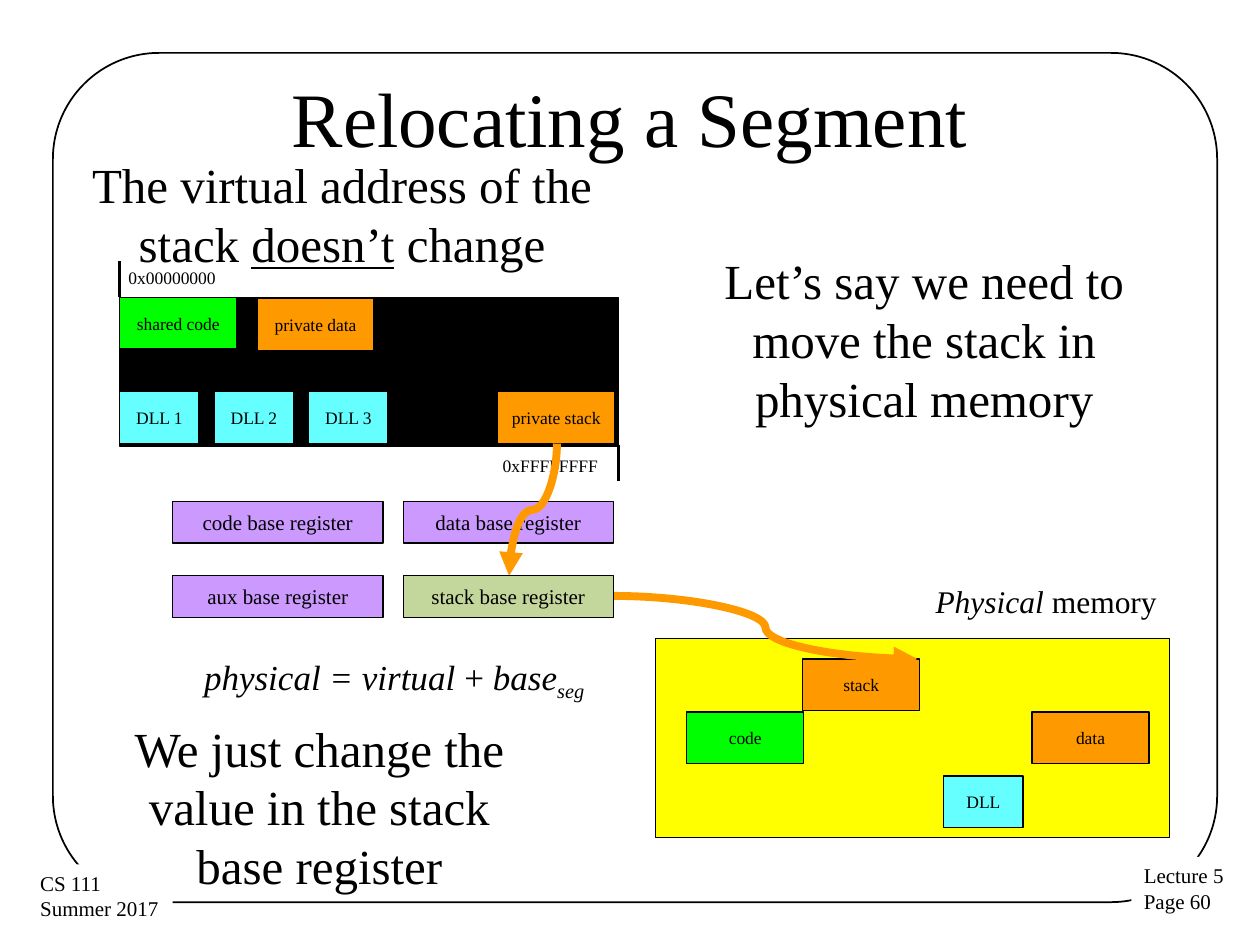
from dataclasses import dataclass

from pptx import Presentation
from pptx.dml.color import RGBColor
from pptx.enum.shapes import MSO_CONNECTOR as Link, MSO_SHAPE as Shape
from pptx.enum.text import MSO_ANCHOR as Anchor, MSO_AUTO_SIZE as AutoSize, PP_ALIGN as Align
from pptx.oxml.ns import qn
from pptx.oxml.xmlchemy import OxmlElement
from pptx.util import Inches, Pt


@dataclass(frozen=True)
class Theme:
    font: str = "Times New Roman"
    black: str = "000000"
    white: str = "FFFFFF"
    green: str = "00FF00"
    orange: str = "FF9900"
    cyan: str = "66FFFF"
    yellow: str = "FFFF00"
    purple: str = "CC99FF"
    sage: str = "C3D69B"
    title: int = 44
    comment: int = 28
    formula: int = 20
    heading: int = 18
    label: int = 12
    small: int = 10
    outline: float = 0.75
    arrow: float = 4.5


class SlideBuilder:
    """Draws themed elements on the current slide."""

    def __init__(self, slide, theme):
        self.slide = slide
        self.theme = theme

    def add_runs(self, shape, paragraphs, size, align, wrap=False, margins=(0.1, 0.05)):
        frame = shape.text_frame
        frame.word_wrap = wrap
        frame.margin_left = frame.margin_right = Inches(margins[0])
        frame.margin_top = frame.margin_bottom = Inches(margins[1])
        for index, runs in enumerate(paragraphs):
            paragraph = frame.paragraphs[0] if index == 0 else frame.add_paragraph()
            paragraph.alignment = align
            for text, style in runs:
                run = paragraph.add_run()
                run.text = text
                font = run.font
                font.name = self.theme.font
                font.size = Pt(style.get("size", size))
                font.color.rgb = RGBColor.from_string(self.theme.black)
                font.italic = style.get("italic", False)
                font.underline = style.get("underline", False)
                if style.get("subscript"):
                    font._element.set("baseline", "-25000")

    def text(self, box, paragraphs, size, align=Align.CENTER, wrap=False,
             margins=(0.1, 0.05), anchor=Anchor.TOP, grow=True, fill=None):
        shape = self.slide.shapes.add_textbox(*map(Inches, box))
        self.add_runs(shape, paragraphs, size, align, wrap, margins)
        shape.text_frame.vertical_anchor = anchor
        shape.text_frame.auto_size = AutoSize.SHAPE_TO_FIT_TEXT if grow else AutoSize.NONE
        if fill:
            shape.fill.solid()
            shape.fill.fore_color.rgb = RGBColor.from_string(fill)

    def box(self, box, fill=None, label=None, size=None, margins=(0.1, 0.05),
            kind=Shape.RECTANGLE, width=None):
        shape = self.slide.shapes.add_shape(kind, *map(Inches, box))
        shape.shadow.inherit = False
        if fill:
            shape.fill.solid()
            shape.fill.fore_color.rgb = RGBColor.from_string(fill)
        else:
            shape.fill.background()
        shape.line.color.rgb = RGBColor.from_string(self.theme.black)
        shape.line.width = Pt(width or self.theme.outline)
        if label:
            self.add_runs(shape, [[(label, {})]], size, Align.CENTER, margins=margins)
            shape.text_frame.vertical_anchor = Anchor.MIDDLE
        return shape

    def segment(self, left, top, label, fill, width=0.93):
        self.box((left, top, width, 0.41), fill, label, self.theme.small, (0.09, 0.04))

    def register(self, left, top, label, fill):
        self.box((left, top, 1.67, 0.33), fill, label, self.theme.label)

    def connector(self, kind, start, end, color, width):
        line = self.slide.shapes.add_connector(kind, *map(Inches, start + end))
        line.line.color.rgb = RGBColor.from_string(color)
        line.line.width = Pt(width)
        line.element.spPr.append(OxmlElement("a:effectLst"))
        return line

    def tick(self, x, top):
        self.connector(Link.STRAIGHT, (x, top), (x, top + 0.29), self.theme.black, 0)

    def arrow(self, start, end, vertical=False):
        theme = self.theme
        if vertical:
            middle_x, middle_y = (start[0] + end[0]) / 2, (start[1] + end[1]) / 2
            half_x, half_y = (end[1] - start[1]) / 2, (start[0] - end[0]) / 2
            start = (middle_x - half_x, middle_y - half_y)
            end = (middle_x + half_x, middle_y + half_y)
        line = self.connector(Link.CURVE, start, end, theme.orange, theme.arrow)
        properties = line.element.spPr
        if vertical:
            properties.find(qn("a:xfrm")).set("rot", str(90 * 60000))
        head = OxmlElement("a:tailEnd")
        head.set("type", "triangle")
        properties.find(qn("a:ln")).append(head)


def main():
    theme = Theme()
    presentation = Presentation()
    presentation.slide_width, presentation.slide_height = Inches(10), Inches(7.5)
    slide = presentation.slides.add_slide(presentation.slide_layouts[6])
    builder = SlideBuilder(slide, theme)

    frame = builder.box((0.42, 0.42, 9.24, 6.74), kind=Shape.ROUNDED_RECTANGLE, width=1)
    frame.adjustments[0] = 0.125
    for box, lines in (
        ((8.98, 6.8, 0.84, 0.51), ("Lecture 5", "Page 60")),
        ((0.22, 6.86, 1.15, 0.51), ("CS 111", "Summer 2017")),
    ):
        builder.text(box, [[(line, {})] for line in lines], theme.label, Align.LEFT,
                     fill=theme.white)
    builder.text((0.5, 0.3, 9, 1.25), [[("Relocating a Segment", {})]], theme.title,
                 wrap=True, anchor=Anchor.MIDDLE, grow=False)

    builder.box((0.95, 2.36, 3.96, 1.18), theme.black)
    builder.tick(0.95, 2.07)
    builder.tick(4.91, 3.53)
    for box, address in (
        ((1.02, 2.12, 0.7, 0.17), "0x00000000"),
        ((3.99, 3.61, 0.77, 0.17), "0xFFFFFFFF"),
    ):
        builder.text(box, [[(address, {})]], theme.small, Align.LEFT, margins=(0, 0))
    builder.segment(0.95, 2.36, "shared code", theme.green)
    builder.segment(2.04, 2.37, "private data", theme.orange)
    builder.segment(3.95, 3.11, "private stack", theme.orange)
    for index in range(3):
        builder.segment(0.95 + 0.75 * index, 3.11, f"DLL {index + 1}", theme.cyan, 0.63)

    builder.box((5.2, 5.07, 4.08, 1.58), theme.yellow)
    builder.text((7.28, 4.57, 2, 0.4), [[("Physical", {"italic": True}), (" memory ", {})]],
                 theme.heading, Align.RIGHT)
    builder.segment(5.45, 5.65, "code", theme.green)
    builder.segment(8.19, 5.65, "data", theme.orange)
    builder.segment(6.37, 5.23, "stack", theme.orange)
    builder.segment(7.49, 6.16, "DLL", theme.cyan, 0.63)

    builder.register(1.37, 3.98, "code base register", theme.purple)
    builder.register(3.2, 3.98, "data base register", theme.purple)
    builder.register(1.37, 4.57, "aux base register", theme.purple)
    builder.arrow((4.87, 4.73), (7.28, 5.23))
    builder.arrow((4.42, 3.52), (4.04, 4.57), vertical=True)
    builder.register(3.2, 4.57, "stack base register", theme.sage)

    builder.text((1.49, 5.15, 3.34, 0.44), [[
        ("physical = virtual", {"italic": True}),
        (" + ", {}),
        ("base", {"italic": True}),
        ("seg", {"italic": True, "subscript": True}),
        (" ", {"size": theme.heading}),
    ]], theme.formula)
    for box, runs in (
        ((5.4, 1.94, 3.87, 1.51),
         [("Let’s say we need to move the stack in physical memory", {})]),
        ((0.5, 1.18, 4.43, 1.04),
         [("The virtual address of the stack ", {}), ("doesn’t", {"underline": True}),
          (" change", {})]),
        ((0.75, 5.65, 3.57, 1.52),
         [("We just change the value in the stack base register", {})]),
    ):
        builder.text(box, [runs], theme.comment, wrap=True)

    presentation.save("out.pptx")


if __name__ == "__main__":
    main()
